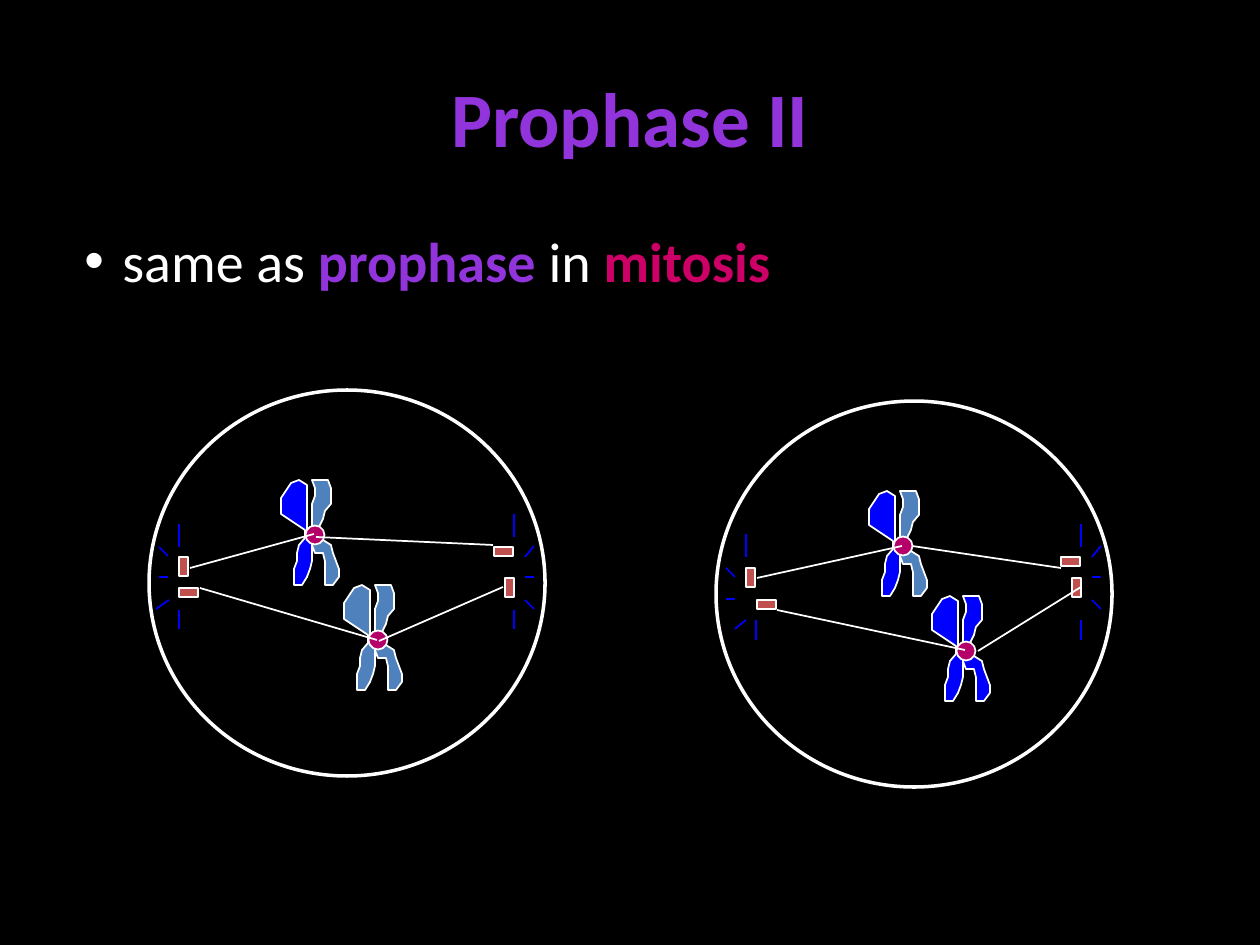
from dataclasses import dataclass

from lxml.etree import SubElement
from pptx import Presentation
from pptx.dml.color import RGBColor
from pptx.enum.shapes import MSO_CONNECTOR as CONN, MSO_SHAPE as SHAPE
from pptx.enum.text import MSO_ANCHOR as ANCHOR, PP_ALIGN as ALIGN
from pptx.oxml.ns import qn
from pptx.util import Emu, Pt


@dataclass(frozen=True)
class Theme:
    font: str = "Calibri"
    black: str = "000000"
    white: str = "FFFFFF"
    purple: str = "9234DB"
    pink: str = "CC0066"
    centromere: str = "B50069"
    centriole: str = "C0504D"
    blue: str = "0000FF"
    steel: str = "4F81BD"
    title_pt: int = 44
    body_pt: int = 32
    thin_pt: int = 1
    cell_pt: int = 2


T = Theme()
PX = 914400 / 126
W, H = 1260, 945

TITLE = [("Prophase II", T.purple, True)]
BODY = [("same as ", T.white, False), ("prophase", T.purple, True),
        (" in ", T.white, False), ("mitosis", T.pink, True)]

# Chromatid outlines, measured from the centromere
LEFT_CHROMATID = [
    (0, 0), (-8, -3), (-8, -50), (-16, -55), (-24, -52), (-34, -37), (-34, -21),
    (-10, -5), (-10, 3), (-16, 10), (-18, 18), (-18, 26), (-21, 34), (-21, 50),
    (-13, 50), (-8, 42), (-5, 34), (-3, 26), (-3, 3)]
RIGHT_CHROMATID = [
    (0, 0), (-3, -8), (-3, -31), (0, -39), (0, -47), (-3, -55), (13, -55),
    (16, -47), (16, -31), (10, -24), (8, -16), (0, 0), (16, 10), (18, 18),
    (24, 34), (24, 42), (18, 50), (10, 50), (10, 26), (8, 18), (0, 18),
    (-3, 10), (-3, 3)]

# Centromere x, y, colour of left and right chromatid
CHROMOSOMES = [(378, 640, T.steel, T.steel), (903, 546, T.blue, T.steel),
               (315, 535, T.blue, T.steel), (966, 651, T.blue, T.blue)]
CENTROMERE = 19

CELL_SIZE = (396, 386)
CELLS = [(149, 390), (716, 401)]

UPRIGHT, FLAT = (9, 19), (19, 9)
CENTRIOLES = [(1072, 578, UPRIGHT), (1061, 557, FLAT),
              (505, 578, UPRIGHT), (494, 547, FLAT),
              (179, 557, UPRIGHT), (179, 588, FLAT),
              (746, 568, UPRIGHT), (757, 600, FLAT)]

# Rays beside a right-hand pole, measured from the pole's x
RIGHT_RAYS = [(11, 557, 20, 546), (11, 577, 20, 577), (11, 600, 20, 609)]
RIGHT_POLES = [514, 1081]
ASTER_RAYS = [
    (514, 537, 514, 514), (514, 610, 514, 629),
    (1081, 547, 1081, 524), (1081, 620, 1081, 640),
    (169, 600, 156, 609), (159, 577, 168, 577), (159, 547, 168, 556),
    (179, 547, 179, 524), (179, 610, 179, 629),
    (746, 620, 735, 629), (726, 599, 735, 599), (726, 568, 735, 577),
    (746, 557, 746, 534), (756, 620, 756, 640)]
SPINDLES = [(190, 568, 314, 534), (316, 537, 493, 545),
            (200, 588, 377, 640), (379, 641, 503, 587),
            (757, 578, 902, 546), (1061, 568, 912, 546),
            (777, 610, 965, 650), (978, 651, 1081, 587)]


def px(*lengths):
    return [Emu(round(n * PX)) for n in lengths]


def rgb(color):
    return RGBColor.from_string(color)


def style(sp, fill, line_pt=T.thin_pt):
    sp.shadow.inherit = False
    if fill:
        sp.fill.solid()
        sp.fill.fore_color.rgb = rgb(fill)
    else:
        sp.fill.background()
    sp.line.color.rgb = rgb(T.white)
    sp.line.width = Pt(line_pt)


def add_shape(s, kind, x, y, size, fill, line_pt=T.thin_pt):
    style(s.shapes.add_shape(kind, *px(x, y, *size)), fill, line_pt)


def add_outline(s, x, y, points, fill):
    builder = s.shapes.build_freeform(*points[0], scale=PX)
    builder.add_line_segments(points[1:], close=True)
    style(builder.convert_to_shape(*px(x, y)), fill)


def add_line(s, ends, color):
    line = s.shapes.add_connector(CONN.STRAIGHT, *px(*ends))
    line.line.color.rgb = rgb(color)
    line.line.width = Pt(T.thin_pt)
    SubElement(line._element.spPr, qn("a:effectLst"))


def add_text(s, box, runs, size):
    sp = s.shapes.add_textbox(*px(*box))
    tf = sp.text_frame
    tf.word_wrap = True
    p = tf.paragraphs[0]
    for text, color, bold in runs:
        r = p.add_run()
        r.text = text
        r.font.name = T.font
        r.font.size = Pt(size)
        r.font.bold = bold
        r.font.color.rgb = rgb(color)
    return tf, p


def add_bullet(p):
    """Give the paragraph a hanging bullet and a gap of 20% above."""
    pPr = p._p.get_or_add_pPr()
    indent, hang = px(47, 38)
    pPr.set("marL", str(indent))
    pPr.set("indent", str(-hang))
    SubElement(SubElement(pPr, qn("a:spcBef")), qn("a:spcPct"), val="20000")
    SubElement(pPr, qn("a:buFont"), typeface="Arial")
    SubElement(pPr, qn("a:buChar"), char="•")


def main():
    prs = Presentation()
    prs.slide_width, prs.slide_height = px(W, H)
    s = prs.slides.add_slide(prs.slide_layouts[6])
    s.background.fill.solid()
    s.background.fill.fore_color.rgb = rgb(T.black)

    tf, p = add_text(s, (63, 38, 1134, 157), TITLE, T.title_pt)
    tf.vertical_anchor = ANCHOR.MIDDLE
    p.alignment = ALIGN.CENTER
    tf, p = add_text(s, (63, 220, 1134, 624), BODY, T.body_pt)
    add_bullet(p)

    for x, y, left, right in CHROMOSOMES:
        add_outline(s, x, y, LEFT_CHROMATID, left)
        add_outline(s, x, y, RIGHT_CHROMATID, right)
        corner = CENTROMERE / 2
        add_shape(s, SHAPE.OVAL, x - corner, y - corner,
                  (CENTROMERE, CENTROMERE), T.centromere)
    for x, y in CELLS:
        add_shape(s, SHAPE.OVAL, x, y, CELL_SIZE, None, T.cell_pt)
    for x, y, size in CENTRIOLES:
        add_shape(s, SHAPE.RECTANGLE, x, y, size, T.centriole)

    rays = [(pole + x1, y1, pole + x2, y2)
            for pole in RIGHT_POLES for x1, y1, x2, y2 in RIGHT_RAYS]
    for ends in rays + ASTER_RAYS:
        add_line(s, ends, T.blue)
    for ends in SPINDLES:
        add_line(s, ends, T.white)

    prs.save("out.pptx")


if __name__ == "__main__":
    main()
